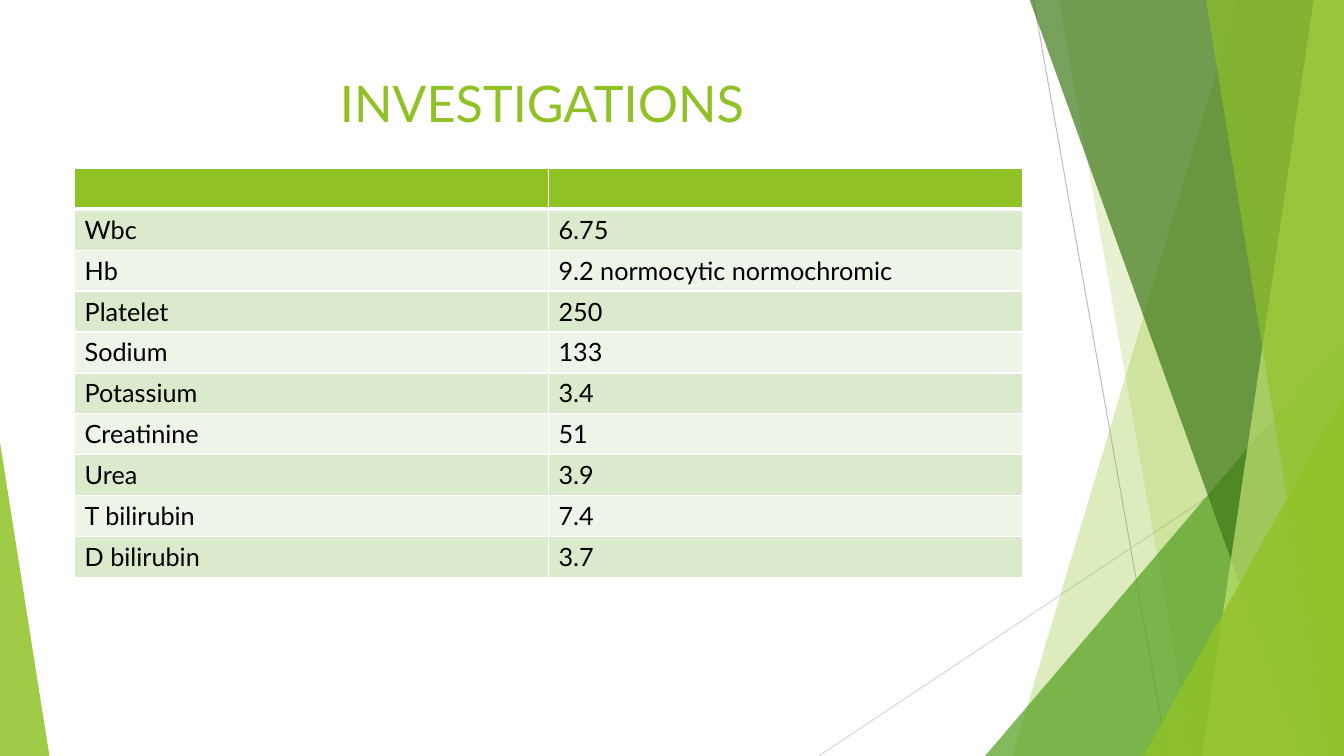
from dataclasses import dataclass

from lxml import etree
from pptx import Presentation
from pptx.dml.color import RGBColor
from pptx.enum.shapes import MSO_CONNECTOR, MSO_SHAPE
from pptx.enum.text import MSO_ANCHOR, PP_ALIGN
from pptx.oxml.ns import qn
from pptx.util import Inches, Pt

STRAIGHT = MSO_CONNECTOR.STRAIGHT
TRIANGLE = MSO_SHAPE.ISOSCELES_TRIANGLE
TOP = MSO_ANCHOR.TOP
CENTER = PP_ALIGN.CENTER


@dataclass(frozen=True)
class Theme:
    font: str = "Lato"
    title_size: int = 36
    body_size: int = 18
    hairline: float = 0.75
    border: int = 1
    header_border: int = 3
    green: str = "90C226"
    mid_green: str = "54A021"
    dark_green: str = "3F7819"
    pale_green: str = "C0E474"
    odd_band: str = "DBE9CD"
    even_band: str = "EEF4E8"
    white: str = "FFFFFF"
    black: str = "000000"
    grey: str = "BFBFBF"
    light_grey: str = "D9D9D9"


THEME = Theme()
WIDTH, HEIGHT = 13.33, 7.5
BLEED_TOP = -0.01
TABLE_LEFT, TABLE_TOP, TABLE_WIDTH, TABLE_HEIGHT = 0.74, 1.67, 9.4, 4.06

RESULTS = [
    ("", ""),
    ("Wbc", "6.75"),
    ("Hb", "9.2 normocytic normochromic"),
    ("Platelet", "250"),
    ("Sodium", "133"),
    ("Potassium", "3.4"),
    ("Creatinine", "51"),
    ("Urea", "3.9"),
    ("T bilirubin", "7.4"),
    ("D bilirubin", "3.7"),
]


def set_format(target, values):
    for name, value in values.items():
        setattr(target, name, value)


def write_text(frame, text, size, color):
    run = frame.paragraphs[0].add_run()
    run.text = text
    set_format(run.font, {"name": THEME.font, "size": Pt(size)})
    run.font.color.rgb = RGBColor.from_string(color)


def paint(shape, color, opacity):
    """Fill a facet with a translucent colour, without outline or shadow."""
    shape.shadow.inherit = False
    shape.line.fill.background()
    shape.fill.solid()
    shape.fill.fore_color.rgb = RGBColor.from_string(color)
    tint = shape.fill._xPr.find(qn("a:solidFill"))[0]
    etree.SubElement(tint, qn("a:alpha"), val=str(opacity * 1000))


def add_hairline(slide, start, end, color):
    hairline = slide.shapes.add_connector(
        STRAIGHT, *(Inches(value) for value in start + end))
    hairline.line.width = Pt(THEME.hairline)
    hairline.line.color.rgb = RGBColor.from_string(color)
    etree.SubElement(hairline._element.spPr, qn("a:effectLst"))


def add_band(slide, top_left, bottom_left, color, opacity):
    """Full-height band from a slanted left edge to the right slide edge."""
    corners = [(top_left, BLEED_TOP), (WIDTH, BLEED_TOP),
               (WIDTH, HEIGHT), (bottom_left, HEIGHT)]
    points = [(Inches(x), Inches(y)) for x, y in corners]
    outline = slide.shapes.build_freeform(*points[0])
    outline.add_line_segments(points[1:], close=True)
    paint(outline.convert_to_shape(), color, opacity)


def add_corner(slide, left, top, width, apex, color, opacity):
    """Right triangle standing on the bottom edge of the slide."""
    corner = slide.shapes.add_shape(
        TRIANGLE, Inches(left), Inches(top), Inches(width),
        Inches(HEIGHT - top))
    corner.adjustments[0] = apex
    paint(corner, color, opacity)


def add_title(slide, text):
    title = slide.shapes.add_textbox(
        Inches(TABLE_LEFT), Inches(0.67), Inches(TABLE_WIDTH), Inches(1.44))
    frame = title.text_frame
    set_format(frame, {"word_wrap": True, "vertical_anchor": TOP})
    frame.paragraphs[0].alignment = CENTER
    write_text(frame, text, THEME.title_size, THEME.green)


def set_borders(cell, widths):
    properties = cell._tc.get_or_add_tcPr()
    for side, width in widths.items():
        edge = etree.SubElement(properties, qn(f"a:ln{side}"), w=str(Pt(width)))
        fill = etree.SubElement(edge, qn("a:solidFill"))
        etree.SubElement(fill, qn("a:srgbClr"), val=THEME.white)


def row_color(row):
    if row == 0:
        return THEME.green
    return THEME.odd_band if row % 2 else THEME.even_band


def add_results(slide, results):
    table = slide.shapes.add_table(
        len(results), 2, Inches(TABLE_LEFT), Inches(TABLE_TOP),
        Inches(TABLE_WIDTH), Inches(TABLE_HEIGHT)).table
    for row, values in enumerate(results):
        borders = dict.fromkeys("LRTB", THEME.border)
        if row < 2:
            borders["B" if row == 0 else "T"] = THEME.header_border
        for column, value in enumerate(values):
            cell = table.cell(row, column)
            set_borders(cell, borders)
            cell.fill.solid()
            cell.fill.fore_color.rgb = RGBColor.from_string(row_color(row))
            if value:
                write_text(cell.text_frame, value, THEME.body_size, THEME.black)


def add_backdrop(slide):
    add_hairline(slide, (10.25, 0), (11.58, HEIGHT), THEME.grey)
    add_hairline(slide, (WIDTH, 4.03), (8.12, HEIGHT), THEME.light_grey)
    add_band(slide, 12.28, 10.04, THEME.green, 30)
    add_band(slide, 10.5, 11.83, THEME.green, 20)
    add_corner(slide, 9.77, 3.33, 3.56, 1, THEME.mid_green, 72)
    add_band(slide, 10.21, 12.91, THEME.dark_green, 70)
    add_band(slide, 13.03, 11.92, THEME.pale_green, 70)
    add_band(slide, 11.96, 13.18, THEME.green, 65)
    add_corner(slide, 11.34, 3.93, 1.99, 1, THEME.green, 80)
    add_corner(slide, 0, 4.39, 0.49, 0, THEME.green, 85)


def main():
    deck = Presentation()
    set_format(deck, {"slide_width": Inches(WIDTH),
                      "slide_height": Inches(HEIGHT)})
    slide = deck.slides.add_slide(deck.slide_layouts[6])

    # Green facets behind the content
    add_backdrop(slide)

    # Heading and laboratory results
    add_title(slide, "INVESTIGATIONS ")
    add_results(slide, RESULTS)

    deck.save("out.pptx")


if __name__ == "__main__":
    main()
